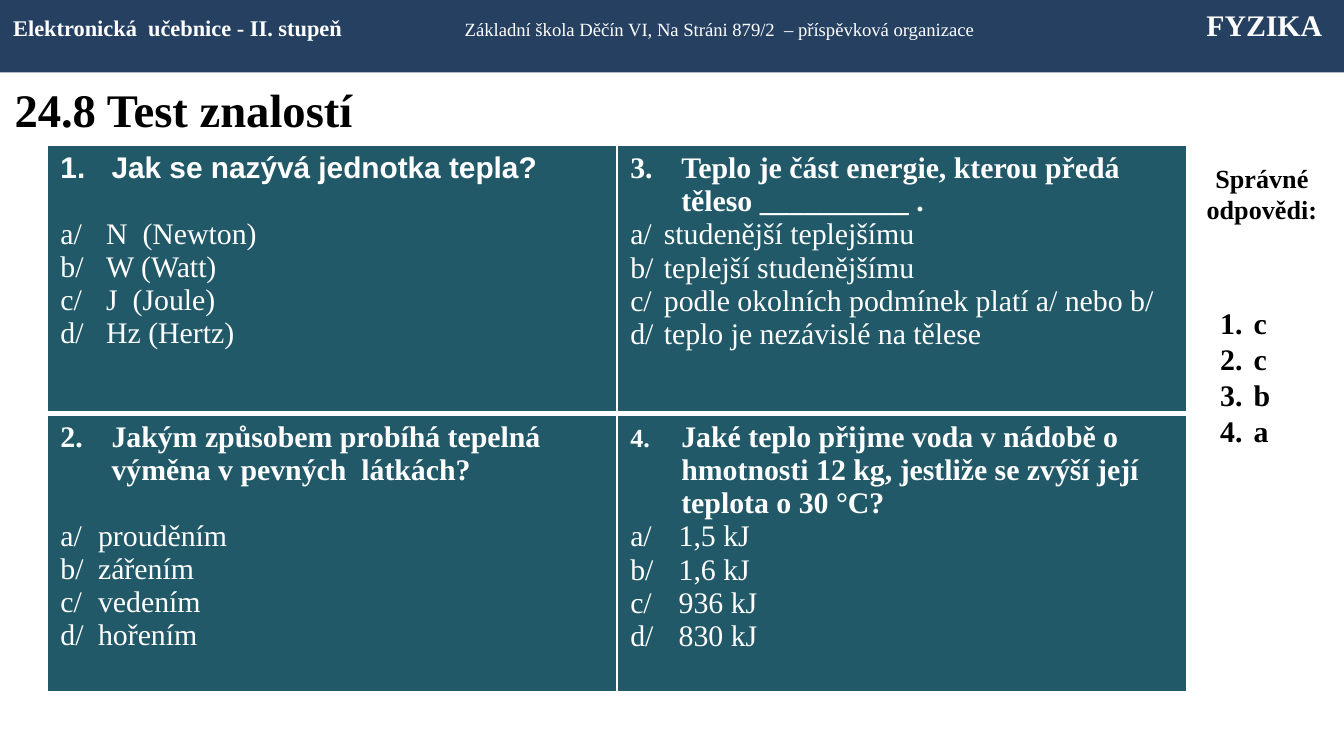
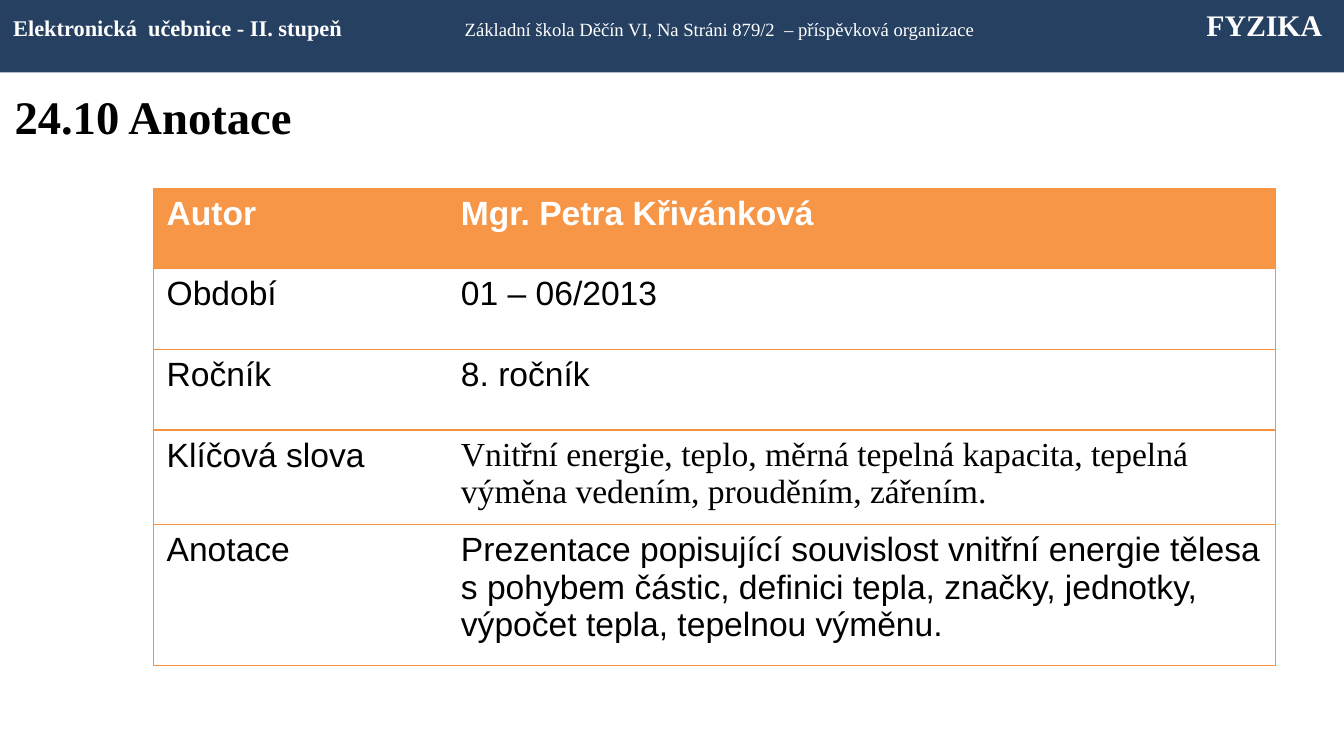
from dataclasses import dataclass

from lxml.etree import SubElement
from pptx import Presentation
from pptx.dml.color import RGBColor
from pptx.enum.shapes import MSO_SHAPE as Shape
from pptx.enum.text import MSO_ANCHOR as Anchor, PP_ALIGN as Align
from pptx.oxml.ns import qn
from pptx.util import Inches, Pt


@dataclass(frozen=True)
class Theme:
    serif: str = "Times New Roman"
    sans: str = "Arial"
    white: str = "FFFFFF"
    black: str = "000000"
    band: str = "254061"
    quiz: str = "215968"
    accent: str = "F79646"
    rule: str = "F69240"
    title: float = 25
    body: float = 18
    quiz_text: float = 16
    label: float = 14
    band_left: float = 12
    band_middle: float = 10


THEME = Theme()

# Question, its font, typed number size (None: automatic number),
# space after, answers, answer indent
QUESTIONS = [
    ("Jak se nazývá jednotka tepla?", THEME.sans, None, 17.5,
     ["N  (Newton)", "W (Watt)", "J  (Joule)", "Hz (Hertz)"], 0.34),
    ("Jakým způsobem probíhá tepelná výměna v pevných  látkách?", THEME.serif, None, 17.5,
     ["prouděním", "zářením", "vedením", "hořením"], 0.28),
    ("Teplo je část energie, kterou předá těleso __________ .", THEME.serif,
     THEME.quiz_text, 0,
     ["studenější teplejšímu", "teplejší studenějšímu",
      "podle okolních podmínek platí a/ nebo b/", "teplo je nezávislé na tělese"], 0.25),
    ("Jaké teplo přijme voda v nádobě o hmotnosti 12 kg, jestliže se zvýší její "
     "teplota o 30 °C?", THEME.serif, THEME.label, 0,
     ["1,5 kJ", "1,6 kJ", "936 kJ", "830 kJ"], 0.36),
]
CORRECT = ["c", "c", "b", "a"]

ANNOTATION = [
    ("Autor", "Mgr. Petra Křivánková"),
    ("Období", "01 – 06/2013"),
    ("Ročník", "8. ročník"),
    ("Klíčová slova", "Vnitřní energie, teplo, měrná tepelná kapacita, tepelná výměna "
                      "vedením, prouděním, zářením."),
    ("Anotace", "Prezentace popisující souvislost vnitřní energie tělesa s pohybem částic, "
                "definici tepla, značky, jednotky, výpočet tepla, tepelnou výměnu."),
]


# Text
def add_span(para, text, size, color, name=THEME.serif, bold=False):
    span = para.add_run()
    span.text = text
    for key, value in {"size": Pt(size), "name": name, "bold": bold}.items():
        setattr(span.font, key, value)
    span.font.color.rgb = RGBColor.from_string(color)


def hang(para, indent):
    props = para._p.get_or_add_pPr()
    props.set("marL", str(Inches(indent)))
    props.set("indent", str(-Inches(indent)))
    return props


def number(para, indent, start=1):
    SubElement(hang(para, indent), qn("a:buAutoNum"),
               type="arabicPeriod", startAt=str(start))


def add_box(page, left, top, width, height, **formats):
    box = page.shapes.add_textbox(*map(Inches, (left, top, width, height)))
    for key, value in {"word_wrap": True, **formats}.items():
        setattr(box.text_frame, key, value)
    return box.text_frame


# Shared page parts
def add_band(page):
    band = page.shapes.add_shape(Shape.RECTANGLE, 0, 0, Inches(10), Inches(0.54))
    band.shadow.inherit = False
    band.fill.solid()
    band.fill.fore_color.rgb = RGBColor.from_string(THEME.band)
    band.line.fill.background()
    band.text_frame.vertical_anchor = Anchor.TOP
    para = band.text_frame.paragraphs[0]
    para.alignment = Align.LEFT
    stops = SubElement(para._p.get_or_add_pPr(), qn("a:tabLst"))
    for position, side in ((3.36, "l"), (9.74, "r")):
        SubElement(stops, qn("a:tab"), pos=str(Inches(position)), algn=side)
    for text, size, bold in (
        ("Elektronická  učebnice - II. stupeň\t", THEME.band_left, True),
        ("Základní škola Děčín VI, Na Stráni 879/2  – příspěvková organizace\t",
         THEME.band_middle, False),
        ("FYZIKA", THEME.quiz_text, True),
    ):
        add_span(para, text, size, THEME.white, bold=bold)


def add_page(deck, title, title_height):
    page = deck.slides.add_slide(deck.slide_layouts[6])
    frame = add_box(page, 0.01, 0.54, 8.11, title_height, vertical_anchor=Anchor.MIDDLE)
    add_span(frame.paragraphs[0], title, THEME.title, THEME.black, bold=True)
    add_band(page)
    return page


# Tables
def add_grid(page, left, top, widths, heights):
    table = page.shapes.add_table(
        len(heights), len(widths),
        *map(Inches, (left, top, sum(widths), sum(heights)))).table
    table.first_row = table.horz_banding = False
    for column, width in zip(table.columns, widths):
        column.width = Inches(width)
    for row, height in zip(table.rows, heights):
        row.height = Inches(height)
    return table


def style_cell(cell, fill, color, left, right, top, bottom):
    """Border widths are in points; zero hides that border."""
    props = cell._tc.get_or_add_tcPr()
    for side, width in zip("LRTB", (left, right, top, bottom)):
        line = SubElement(props, qn(f"a:ln{side}"), w=str(Pt(width)))
        if width:
            SubElement(SubElement(line, qn("a:solidFill")), qn("a:srgbClr"), val=color)
        else:
            SubElement(line, qn("a:noFill"))
    if fill:
        cell.fill.solid()
        cell.fill.fore_color.rgb = RGBColor.from_string(fill)
    else:
        cell.fill.background()


def fill_question(cell, position, question):
    text, name, number_size, gap, answers, indent = question
    para = cell.text_frame.paragraphs[0]
    para.space_after = Pt(gap)
    if number_size:
        hang(para, 0.38)
        add_span(para, f"{position}.\t", number_size, THEME.white, name, True)
    else:
        number(para, 0.38, position)
    add_span(para, text, THEME.quiz_text, THEME.white, name, True)
    for letter, answer in zip("abcd", answers):
        para = cell.text_frame.add_paragraph()
        hang(para, indent)
        add_span(para, f"{letter}/\t{answer}", THEME.quiz_text, THEME.white)


def add_quiz(page):
    table = add_grid(page, 0.35, 1.08, [4.24] * 2, [2.0, 2.07])
    for index, question in enumerate(QUESTIONS):
        column, row = divmod(index, 2)
        cell = table.cell(row, column)
        top, bottom = ((1, 3), (3, 1))[row]
        style_cell(cell, THEME.quiz, THEME.white, 1, 1, top, bottom)
        fill_question(cell, index + 1, question)


def add_correct_answers(page):
    para = add_box(page, 8.86, 1.16, 1.06, 0.57).paragraphs[0]
    para.alignment = Align.CENTER
    add_span(para, "Správné odpovědi:", THEME.label, THEME.black, bold=True)
    frame = add_box(page, 8.98, 1.95, 0.92, 2.26, margin_top=Inches(0.32))
    for index, letter in enumerate(CORRECT):
        para = frame.add_paragraph() if index else frame.paragraphs[0]
        number(para, 0.25)
        add_span(para, letter, THEME.quiz_text, THEME.black, bold=True)


def add_annotation(page):
    table = add_grid(page, 1.14, 1.4, [2.19, 6.16], [0.6, 0.6, 0.6, 0.7, 1.05])
    for row, texts in enumerate(ANNOTATION):
        header = row == 0
        for column, text in enumerate(texts):
            cell = table.cell(row, column)
            left, right = ((0.75, 0), (0, 0.75))[column]
            style_cell(cell, THEME.accent if header else None, THEME.rule,
                       left, right, 0.75, 0.75)
            keywords = texts[0] == "Klíčová slova" and column == 1
            add_span(cell.text_frame.paragraphs[0], text, THEME.body,
                     THEME.white if header else THEME.black,
                     THEME.serif if keywords else THEME.sans, header)


def main():
    deck = Presentation()
    deck.slide_width = Inches(10)
    deck.slide_height = deck.slide_width * 9 // 16

    # Quiz
    page = add_page(deck, "24.8 Test znalostí", 0.54)
    add_quiz(page)
    add_correct_answers(page)

    # Annotation
    page = add_page(deck, "24.10 Anotace", 0.65)
    add_annotation(page)

    deck.save("out.pptx")


if __name__ == "__main__":
    main()
